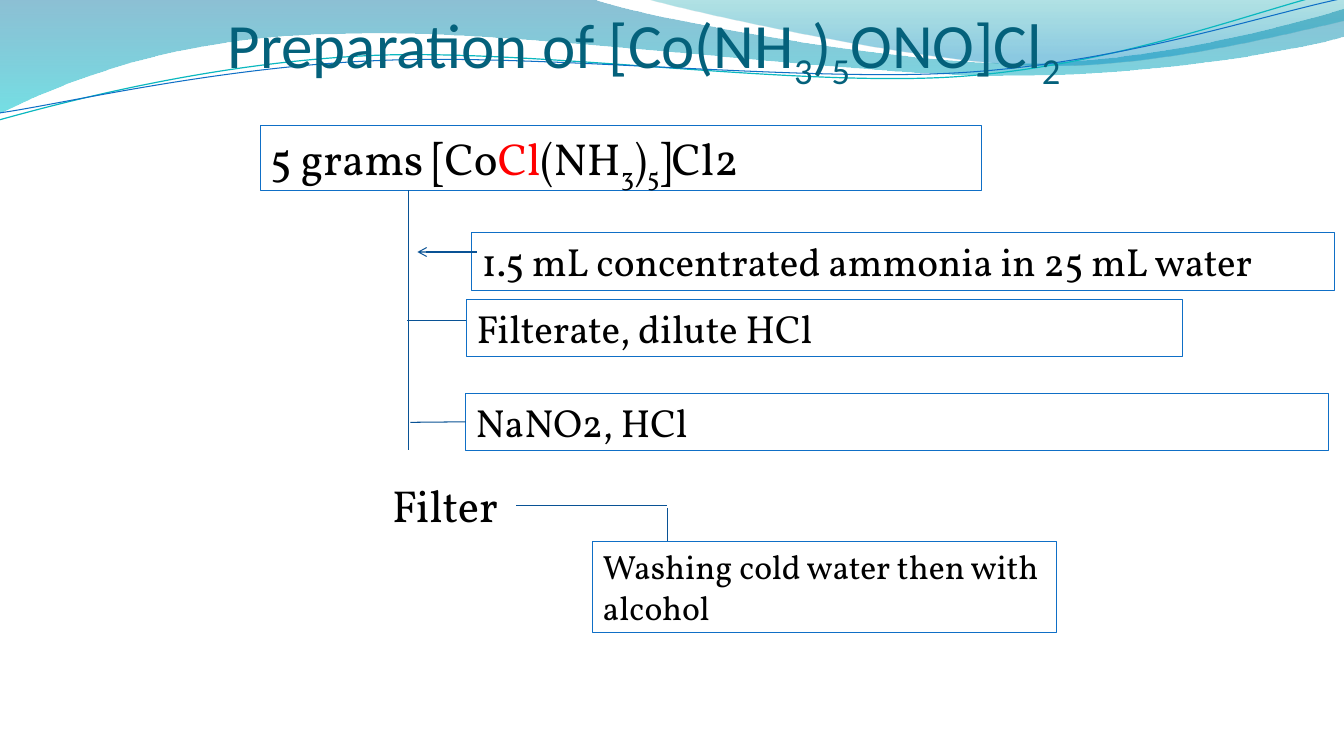
"""Build a slide showing the preparation steps of a cobalt nitrito complex."""
from dataclasses import dataclass
from typing import Optional

from lxml.etree import SubElement
from pptx import Presentation
from pptx.dml.color import RGBColor
from pptx.enum.shapes import MSO_CONNECTOR
from pptx.enum.text import MSO_ANCHOR, MSO_AUTO_SIZE, PP_ALIGN
from pptx.oxml.ns import qn
from pptx.shapes.autoshape import Shape
from pptx.shapes.connector import Connector
from pptx.slide import Slide
from pptx.text.text import _Paragraph as Paragraph
from pptx.util import Inches, Pt

COLORS = {
    "title": "04617B", "text": "000000", "chlorine": "FF0000",
    "border": "0F6FC6", "connector": "095295", "teal line": "0AB8BF",
    "deep blue": "0074A1", "aqua": "00C6CF", "teal": "00A1A9", "azure": "008BBF",
}


@dataclass
class Span:
    """A piece of text with its own colour or baseline."""
    text: str
    color: str = "text"
    subscript: bool = False


@dataclass
class Step:
    """A text box of the procedure."""
    name: str
    area: tuple[float, float, float, float]
    size: int
    spans: list[Span]
    framed: bool = True


@dataclass
class Link:
    """A straight line between two points, joined to a step's left side if named."""
    start: tuple[float, float]
    end: tuple[float, float]
    arrow: bool = False
    target: Optional[str] = None


@dataclass
class Stop:
    """A gradient stop with its opacity in percent."""
    color: str
    position: float
    opacity: int


@dataclass
class Wave:
    """A decorative outline; segments hold one point (line) or three (curve)."""
    start: tuple[float, float]
    segments: list[tuple[tuple[float, float], ...]]
    stops: tuple[Stop, ...] = ()
    line: str = "border"
    weight: float = 0.75


WAVES = [
    Wave((0, -0.01), [
        ((5.87, -0.01),),
        ((6.34, 0.17), (8.85, 0.63), (10.11, 0.63)),
        ((11.38, 0.63), (12.78, 0.26), (13.33, 0.09)),
        ((13.35, 0.36),),
        ((13.11, 0.44), (11.6, 0.76), (9.94, 0.75)),
        ((8.29, 0.75), (5.09, 0.28), (3.43, 0.34)),
        ((1.72, 0.35), (0.61, 0.83), (-0.01, 1.13)),
        ((0, -0.01),),
    ], (Stop("deep blue", 0, 45), Stop("aqua", 1, 55))),
    Wave((6.39, -0.01), [
        ((6.79, 0.11), (9.09, 0.62), (10.25, 0.65)),
        ((11.41, 0.69), (12.82, 0.32), (13.33, 0.21)),
        ((13.33, 0),),
        ((6.39, -0.01),),
    ], (Stop("teal", 0, 30), Stop("azure", 0.8, 45))),
    Wave((-0.01, 1.19), [
        ((0.64, 1.01), (2.11, 0.62), (3.69, 0.55)),
        ((5.27, 0.48), (7.9, 0.87), (9.5, 0.76)),
        ((11.1, 0.65), (12.52, 0.08), (13.31, -0.1)),
    ], line="teal line", weight=0.85),
    Wave((0, 1.12), [
        ((0.63, 1.03), (2.18, 0.66), (3.78, 0.6)),
        ((5.37, 0.53), (7.96, 0.82), (9.55, 0.72)),
        ((11.15, 0.62), (12.55, 0.14), (13.34, -0.02)),
    ]),
]
TITLE = [
    Span("Preparation of [Co(NH", "title"), Span("3", "title", True),
    Span(")", "title"), Span("5", "title", True),
    Span("ONO]Cl", "title"), Span("2", "title", True),
]
STEPS = [
    Step("complex", (2.58, 1.25, 7.16, 0.64), 32, [
        Span("5 grams [Co"), Span("Cl", "chlorine"), Span("(NH"),
        Span("3", subscript=True), Span(")"), Span("5", subscript=True), Span("]Cl2"),
    ]),
    Step("nitrite", (4.62, 3.9, 8.56, 0.57), 28, [Span("NaNO2, HCl")]),
    Step("filter", (3.79, 4.69, 1.67, 0.67), 32, [Span("Filter")], framed=False),
    Step("washing", (5.88, 5.37, 4.6, 0.91), 24,
         [Span("Washing cold water then with alcohol")]),
    Step("ammonia", (4.68, 2.31, 8.56, 0.57), 28,
         [Span("1.5 mL concentrated ammonia in 25 mL water")]),
    Step("filtrate", (4.63, 2.97, 7.1, 0.57), 28, [Span("Filterate, dilute HCl")]),
]
LINKS = [
    Link((4.05, 1.89), (4.05, 4.46)),
    Link((5.12, 5.02), (6.62, 5.02)),
    Link((6.62, 5.04), (6.62, 5.37)),
    Link((4.04, 3.18), (4.62, 3.18)),
    Link((4.73, 2.5), (4.14, 2.5), arrow=True),
    Link((4.07, 4.19), (4.62, 4.19), target="nitrite"),
]


def rgb(name: str) -> RGBColor:
    """Return a named colour."""
    return RGBColor.from_string(COLORS[name])


def bend(shape: Shape, wave: Wave) -> None:
    """Merge each three-point segment of the outline into one cubic curve."""
    vertices = iter(list(shape._element.iter(qn("a:lnTo"))))
    for segment in wave.segments:
        first, *others = [next(vertices) for _ in segment]
        if others:
            first.tag = qn("a:cubicBezTo")
        for other in others:
            first.append(other[0])
            other.getparent().remove(other)


def draw_wave(page: Slide, wave: Wave) -> None:
    """Draw one decorative wave as a gradient area or a thin line."""
    points = [(Inches(x), Inches(y)) for segment in wave.segments for x, y in segment]
    builder = page.shapes.build_freeform(*map(Inches, wave.start))
    builder.add_line_segments(points, close=bool(wave.stops))
    shape = builder.convert_to_shape()
    bend(shape, wave)
    shape.shadow.inherit = False
    if not wave.stops:
        shape.fill.background()
        shape.line.color.rgb = rgb(wave.line)
        shape.line.width = Pt(wave.weight)
        return
    shape.line.fill.background()
    shape.fill.gradient()
    shape.fill.gradient_angle = 270
    for target, stop in zip(shape.fill.gradient_stops, wave.stops):
        target.color.rgb = rgb(stop.color)
        target.position = stop.position
    for color, stop in zip(shape.fill._xPr.iter(qn("a:srgbClr")), wave.stops):
        SubElement(color, qn("a:alpha"), val=str(stop.opacity * 1000))


def write_spans(para: Paragraph, spans: list[Span], font: str, size: int) -> None:
    """Write the spans into a left-aligned paragraph."""
    para.alignment = PP_ALIGN.LEFT
    for span in spans:
        run = para.add_run()
        run.text = span.text
        run.font.name = font
        run.font.size = Pt(size)
        run.font.color.rgb = rgb(span.color)
        if span.subscript:
            run.font._element.set("baseline", "-25000")


def draw_title(page: Slide) -> None:
    """Place and fill the title placeholder."""
    title = page.shapes.title
    title.left, title.top, title.width, title.height = map(Inches, (2.26, 0, 9, 0.91))
    frame = title.text_frame
    frame.auto_size = MSO_AUTO_SIZE.NONE
    frame.vertical_anchor = MSO_ANCHOR.BOTTOM
    frame.margin_left = frame.margin_right = frame.margin_bottom = 0
    frame.margin_top = Inches(0.05)
    write_spans(frame.paragraphs[0], TITLE, "Calibri", 45)
    page.shapes._spTree.append(title._element)


def draw_step(page: Slide, step: Step) -> Shape:
    """Draw one step of the procedure."""
    box = page.shapes.add_textbox(*map(Inches, step.area))
    frame = box.text_frame
    frame.word_wrap = True
    if step.framed:
        frame.auto_size = MSO_AUTO_SIZE.SHAPE_TO_FIT_TEXT
        box.line.color.rgb = rgb("border")
        box.line.width = Pt(0.75)
    write_spans(frame.paragraphs[0], step.spans, "Vollkorn", step.size)
    return box


def draw_link(page: Slide, link: Link, boxes: dict[str, Shape]) -> Connector:
    """Draw one connecting line."""
    connector = page.shapes.add_connector(
        MSO_CONNECTOR.STRAIGHT, *map(Inches, link.start + link.end))
    if link.target:
        connector.end_connect(boxes[link.target], 1)
    connector.line.color.rgb = rgb("connector")
    connector.line.width = Pt(0.75)
    if link.arrow:
        SubElement(connector.line._get_or_add_ln(), qn("a:tailEnd"), type="arrow")
    SubElement(connector._element.spPr, qn("a:effectLst"))
    return connector


def main() -> None:
    """Build and save the deck."""
    deck = Presentation()
    deck.slide_width, deck.slide_height = Inches(13.33), Inches(7.5)
    page = deck.slides.add_slide(deck.slide_layouts[5])
    for wave in WAVES:
        draw_wave(page, wave)
    draw_title(page)
    boxes = {step.name: draw_step(page, step) for step in STEPS}
    for link in LINKS:
        draw_link(page, link, boxes)
    deck.save("out.pptx")


if __name__ == "__main__":
    main()
